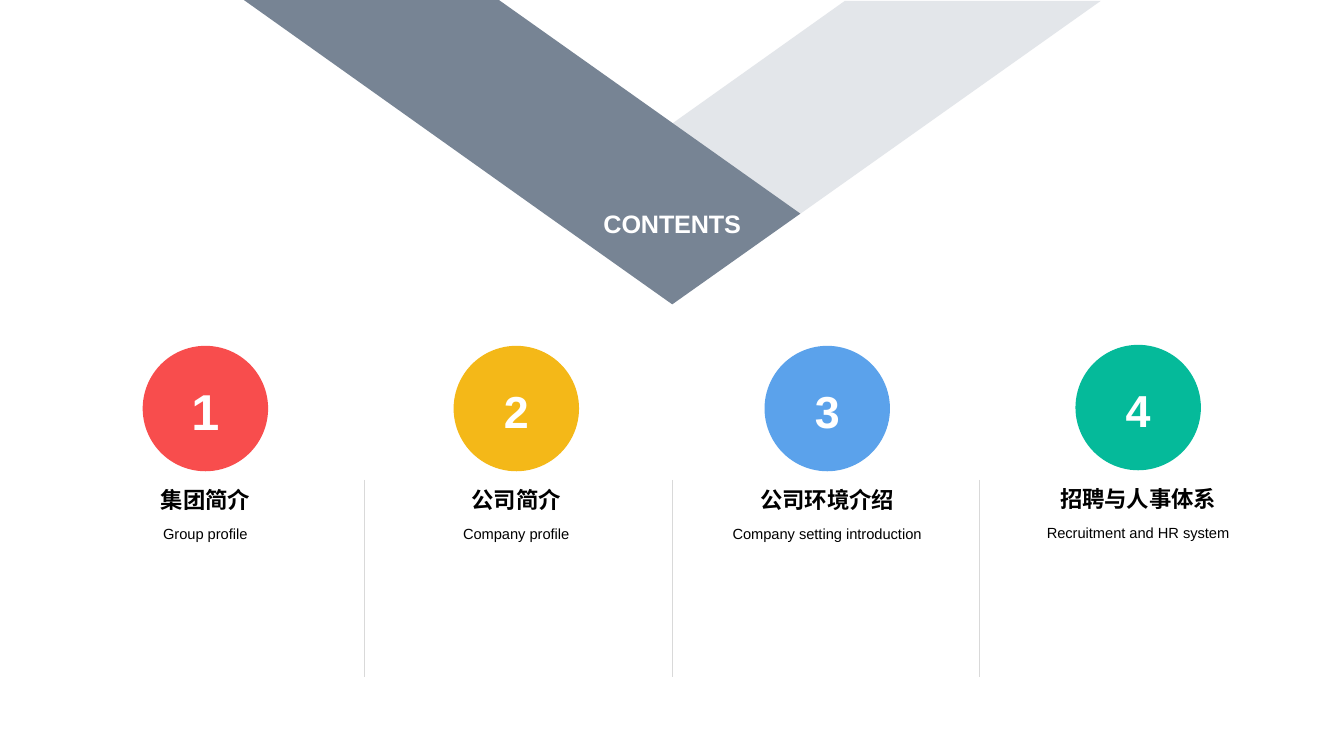
from lxml import etree
from pptx import Presentation
from pptx.dml.color import RGBColor
from pptx.enum.shapes import MSO_CONNECTOR, MSO_SHAPE
from pptx.enum.text import MSO_ANCHOR, MSO_AUTO_SIZE, PP_ALIGN
from pptx.oxml.ns import qn
from pptx.util import Pt

OVAL = MSO_SHAPE.OVAL
LINE = MSO_CONNECTOR.STRAIGHT
TOP, MIDDLE = MSO_ANCHOR.TOP, MSO_ANCHOR.MIDDLE
CENTER = PP_ALIGN.CENTER
NO_FIT = MSO_AUTO_SIZE.NONE


def color(code):
    return RGBColor.from_string(code)


class Deck:
    latin = "Arial"
    asian = "Noto Sans CJK SC"
    white, black, gray = "FFFFFF", "000000", "D9D9D9"

    def __init__(self, width, height):
        self.prs = Presentation()
        self.prs.slide_width, self.prs.slide_height = Pt(width), Pt(height)
        self.slide = self.prs.slides.add_slide(self.prs.slide_layouts[5])
        self.shapes = self.slide.shapes

    def paint(self, shape, fill):
        shape.shadow.inherit = False
        shape.fill.solid()
        shape.fill.fore_color.rgb = color(fill)
        shape.line.fill.background()

    def frame(self, shape, anchor, inset):
        frame = shape.text_frame
        frame.word_wrap = True
        frame.auto_size = NO_FIT
        frame.vertical_anchor = anchor
        frame.margin_left = frame.margin_right = frame.margin_bottom = 0
        frame.margin_top = Pt(inset)
        return frame

    def style(self, para, text, size, fill, bold=False, face=None, tight=False):
        para.text = text
        para.alignment = CENTER
        font = para.font
        font.size, font.bold = Pt(size), bold
        font.name = face or self.latin
        font.color.rgb = color(fill)
        props = para._p.pPr.find(qn("a:defRPr"))
        etree.SubElement(props, qn("a:ea")).set("typeface", font.name)
        if tight:
            props.set("spc", "-10")

    def title(self, text, x, y, w, h):
        shape = self.shapes.title
        shape.left, shape.top, shape.width, shape.height = map(Pt, (x, y, w, h))
        frame = self.frame(shape, TOP, 1.7)
        self.style(frame.paragraphs[0], text, 18, self.white, True, tight=True)
        # Bring the title in front of the bands
        shape.element.getparent().append(shape.element)

    def band(self, points, fill):
        start, *rest = [(Pt(x), Pt(y)) for x, y in points]
        build = self.shapes.build_freeform(*start)
        build.add_line_segments(rest)
        self.paint(build.convert_to_shape(), fill)

    def badge(self, text, mid, y, size, fill, points):
        shape = self.shapes.add_shape(
            OVAL, Pt(mid - size / 2), Pt(y), Pt(size), Pt(size))
        self.paint(shape, fill)
        frame = self.frame(shape, MIDDLE, 3)
        self.style(frame.paragraphs[0], text, points, self.white, True)

    def label(self, name, gloss, mid, y, w, h):
        box = self.shapes.add_textbox(Pt(mid - w / 2), Pt(y), Pt(w), Pt(h))
        frame = self.frame(box, TOP, 1.6)
        self.style(frame.paragraphs[0], name, 16, self.black, True,
                   self.asian, tight=True)
        para = frame.add_paragraph()
        para.space_before = Pt(8.6)
        self.style(para, gloss, 10.5, self.black)

    def rule(self, x, top, bottom):
        line = self.shapes.add_connector(LINE, Pt(x), Pt(top), Pt(x), Pt(bottom))
        line.line.color.rgb = color(self.gray)
        line.line.width = Pt(0.25)
        etree.SubElement(line._element.spPr, qn("a:effectLst"))


def main():
    deck = Deck(960, 540)

    # Crossing bands and heading
    deck.band([(786.2, 0.7), (603.4, 0.7), (388.8, 153.2), (571, 153.2)], "E3E6EA")
    deck.band([(356.4, 0), (174.2, 0), (388.8, 152.6), (480.2, 217.4),
               (571.7, 152.6)], "778494")
    deck.title("CONTENTS", 429.8, 146.9, 100.8, 23.8)

    # Chapters: name, gloss, colour, number size, upward shift
    parts = [
        ("集团简介", "Group profile", "F84D4D", 36, 0),
        ("公司简介", "Company profile", "F4B818", 32, 0),
        ("公司环境介绍", "Company setting introduction", "5BA2EB", 32, 0),
        ("招聘与人事体系", "Recruitment and HR system", "05BA9A", 32, 0.7),
    ]
    for i, (name, gloss, fill, points, lift) in enumerate(parts):
        mid = 146.7 + 222.1 * i
        deck.badge(str(i + 1), mid, 247 - lift, 89.6, fill, points)
        deck.label(name, gloss, mid, 345.6 - lift, 160, 43)

    # Dividers between chapters
    for i in range(len(parts) - 1):
        deck.rule(260.5 + 219.6 * i, 342.7, 483.8)

    deck.prs.save("out.pptx")


if __name__ == "__main__":
    main()
